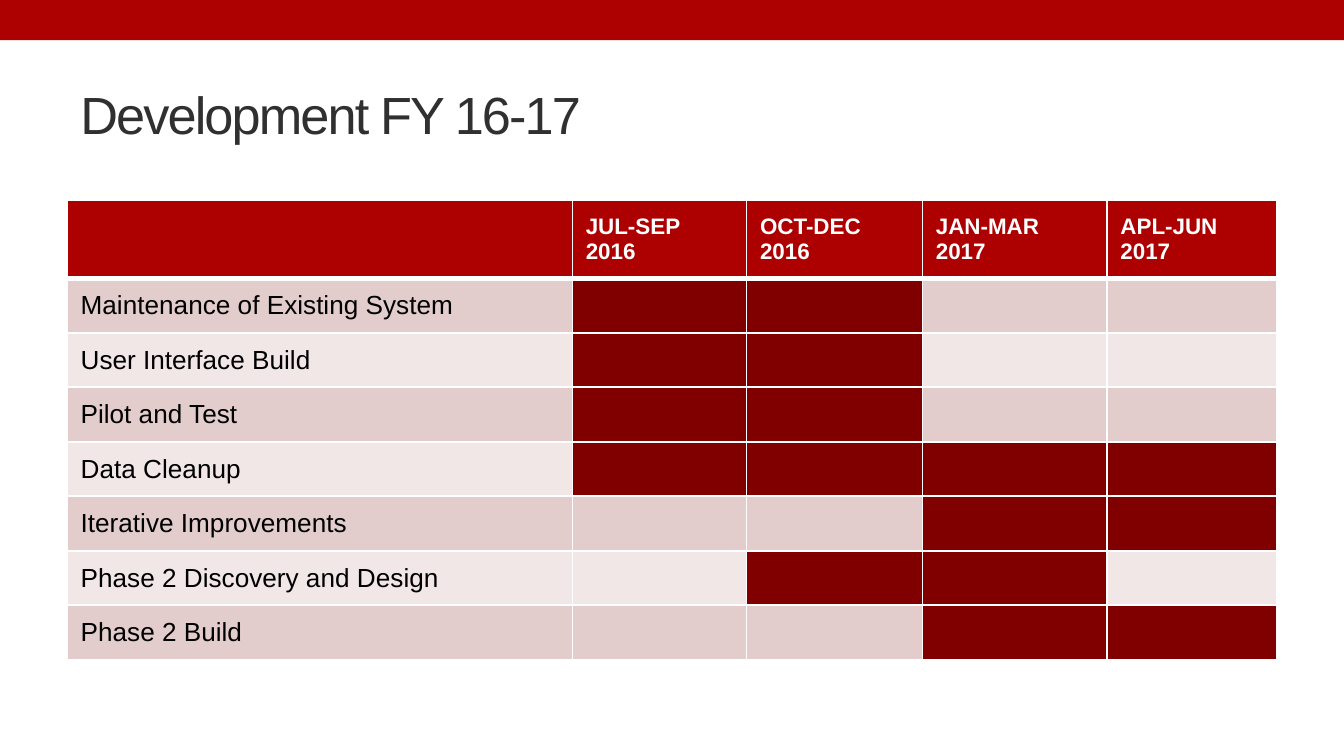
from dataclasses import dataclass

from lxml import etree
from pptx import Presentation
from pptx.dml.color import RGBColor
from pptx.enum import shapes, text
from pptx.oxml import ns
from pptx.util import Pt


@dataclass(frozen=True)
class Theme:
    font: str = "Arial"
    red: str = "AD0101"
    active: str = "800000"
    bands: tuple = ("E3CCCC", "F1E7E7")
    white: str = "FFFFFF"
    black: str = "000000"
    title: str = "303030"
    title_size: int = 28
    header_size: int = 12
    label_size: int = 14
    border: int = 1
    header_border: int = 3


THEME = Theme()
QUARTERS = ("JUL-SEP\n2016", "OCT-DEC\n2016", "JAN-MAR 2017", "APL-JUN 2017")
TASKS = (
    ("Maintenance of Existing System", (1, 2)),
    ("User Interface Build", (1, 2)),
    ("Pilot and Test", (1, 2)),
    ("Data Cleanup", (1, 2, 3, 4)),
    ("Iterative Improvements", (3, 4)),
    ("Phase 2 Discovery and Design", (2, 3)),
    ("Phase 2 Build", (3, 4)),
)
COLUMN_WIDTHS = (270.6, 93.4, 94.2, 98.9, 90.9)
HEADER_HEIGHT = 41.6
ROW_HEIGHT = 29.2


def write_text(frame, content, size, color, bold=False, spacing=None):
    frame.word_wrap = True
    for index, line in enumerate(content.split("\n")):
        paragraph = frame.add_paragraph() if index else frame.paragraphs[0]
        run = paragraph.add_run()
        run.text = line
        run.font.name = THEME.font
        run.font.size = Pt(size)
        run.font.bold = bold
        run.font.color.rgb = RGBColor.from_string(color)
        if spacing is not None:
            run.font._element.set("spc", str(round(spacing * 100)))


def add_top_band(slide, left, top, width, height):
    band = slide.shapes.add_shape(
        shapes.MSO_SHAPE.RECTANGLE, Pt(left), Pt(top), Pt(width), Pt(height)
    )
    band.shadow.inherit = False
    band.fill.solid()
    band.fill.fore_color.rgb = RGBColor.from_string(THEME.red)
    band.line.fill.background()


def add_title(slide, left, top, width, height):
    box = slide.shapes.add_textbox(Pt(left), Pt(top), Pt(width), Pt(height))
    box.text_frame.vertical_anchor = text.MSO_ANCHOR.MIDDLE
    write_text(
        box.text_frame, "Development FY 16-17", THEME.title_size, THEME.title, spacing=-1
    )


def style_cell(cell, fill, top_border, bottom_border):
    properties = cell._tc.get_or_add_tcPr()
    widths = {
        "lnL": THEME.border,
        "lnR": THEME.border,
        "lnT": top_border,
        "lnB": bottom_border,
    }
    for tag, width in widths.items():
        line = etree.SubElement(properties, ns.qn(f"a:{tag}"), w=str(Pt(width)))
        solid = etree.SubElement(line, ns.qn("a:solidFill"))
        etree.SubElement(solid, ns.qn("a:srgbClr"), val=THEME.white)
    cell.fill.solid()
    cell.fill.fore_color.rgb = RGBColor.from_string(fill)
    cell.vertical_anchor = text.MSO_ANCHOR.MIDDLE


def add_schedule(slide, left, top, width, height):
    frame = slide.shapes.add_table(
        len(TASKS) + 1, len(COLUMN_WIDTHS), Pt(left), Pt(top), Pt(width), Pt(height)
    )
    table = frame.table
    for column, column_width in zip(table.columns, COLUMN_WIDTHS):
        column.width = Pt(column_width)
    for index, row in enumerate(table.rows):
        row.height = Pt(ROW_HEIGHT if index else HEADER_HEIGHT)

    for column in range(len(COLUMN_WIDTHS)):
        cell = table.cell(0, column)
        style_cell(cell, THEME.red, THEME.border, THEME.header_border)
        if column:
            write_text(
                cell.text_frame,
                QUARTERS[column - 1],
                THEME.header_size,
                THEME.white,
                bold=True,
            )

    for row, (task, active_quarters) in enumerate(TASKS, start=1):
        band = THEME.bands[(row - 1) % len(THEME.bands)]
        top_border = THEME.header_border if row == 1 else THEME.border
        for column in range(len(COLUMN_WIDTHS)):
            fill = THEME.active if column in active_quarters else band
            style_cell(table.cell(row, column), fill, top_border, THEME.border)
        write_text(table.cell(row, 0).text_frame, task, THEME.label_size, THEME.black)


def main():
    presentation = Presentation()
    presentation.slide_width = Pt(720)
    presentation.slide_height = Pt(405)
    slide = presentation.slides.add_slide(presentation.slide_layouts[6])
    add_top_band(slide, 0, 0, 720, 21.6)
    add_title(slide, 36, 31.7, 648, 58.3)
    table_height = HEADER_HEIGHT + ROW_HEIGHT * len(TASKS)
    add_schedule(slide, 36, 107.5, sum(COLUMN_WIDTHS), table_height)
    presentation.save("out.pptx")


if __name__ == "__main__":
    main()
